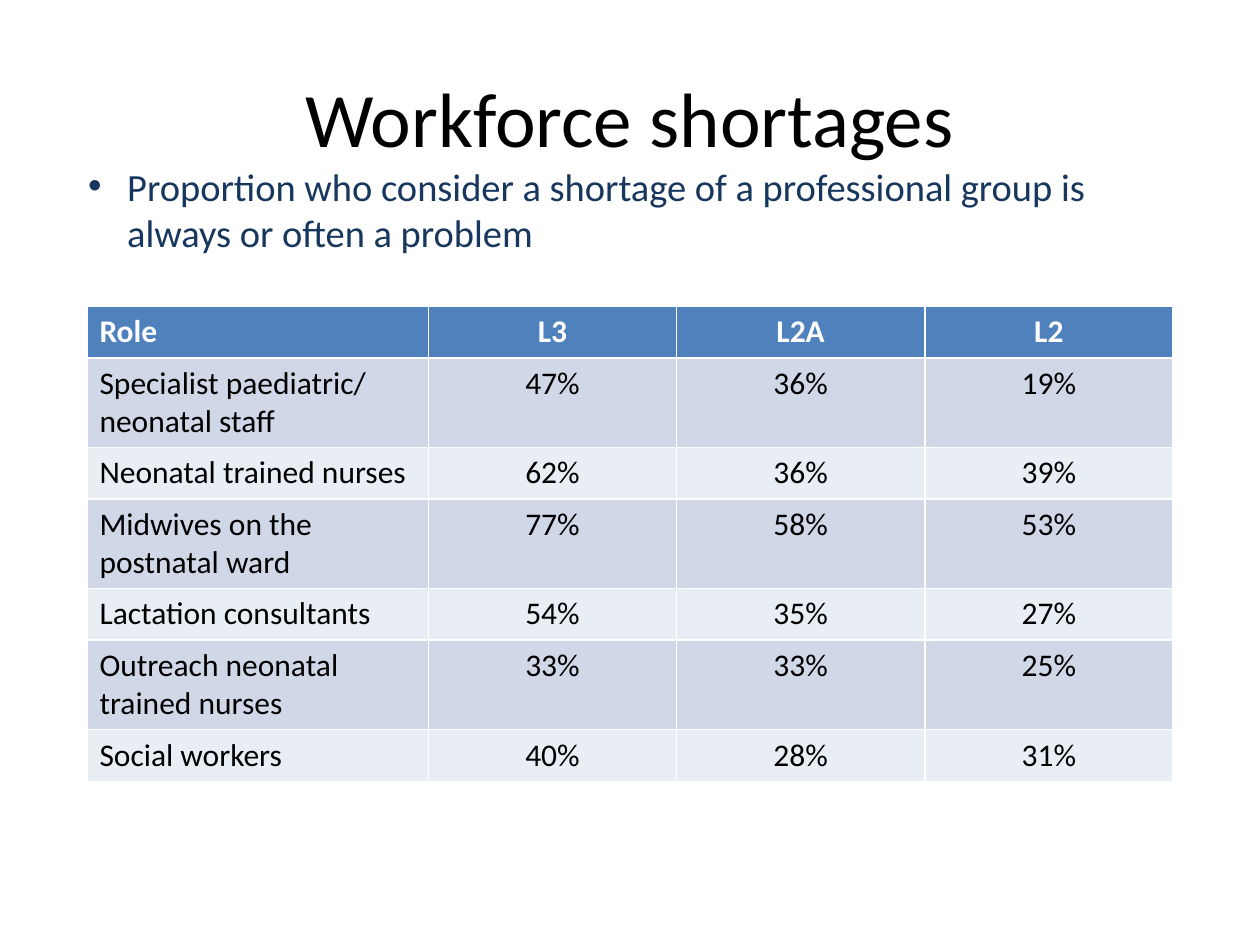
from dataclasses import dataclass

from lxml import etree
from pptx import Presentation
from pptx.dml.color import RGBColor
from pptx.enum.text import MSO_ANCHOR, MSO_AUTO_SIZE, PP_ALIGN
from pptx.oxml.ns import qn
from pptx.util import Inches, Pt

CENTER, LEFT = PP_ALIGN.CENTER, PP_ALIGN.LEFT
MIDDLE, TOP = MSO_ANCHOR.MIDDLE, MSO_ANCHOR.TOP
FIXED_SIZE = MSO_AUTO_SIZE.NONE


@dataclass(frozen=True)
class Theme:
    font: str = "Calibri"
    title_size: int = 44
    body_size: int = 22
    table_size: int = 18
    black: str = "000000"
    white: str = "FFFFFF"
    navy: str = "17375E"
    header_fill: str = "4F81BD"
    band_fills: tuple = ("D0D8E8", "E9EDF4")


THEME = Theme()
ROLES = [
    ("Role", "L3", "L2A", "L2"),
    ("Specialist paediatric/ neonatal staff", "47%", "36%", "19%"),
    ("Neonatal trained nurses", "62%", "36%", "39%"),
    ("Midwives on the postnatal ward", "77%", "58%", "53%"),
    ("Lactation consultants", "54%", "35%", "27%"),
    ("Outreach neonatal trained nurses", "33%", "33%", "25%"),
    ("Social workers", "40%", "28%", "31%"),
]
COLUMN_WIDTHS = (2.71, 1.97, 1.97, 1.97)
ROW_HEIGHT = 0.41


def place(shape, left, top, width, height):
    shape.left, shape.top = Inches(left), Inches(top)
    shape.width, shape.height = Inches(width), Inches(height)


def write(frame, text, size, color, align=LEFT, bold=False):
    frame.text = text
    paragraph = frame.paragraphs[0]
    paragraph.alignment = align
    font = paragraph.font
    font.name, font.size, font.bold = THEME.font, Pt(size), bold
    font.color.rgb = RGBColor.from_string(color)
    return paragraph


deck = Presentation()
deck.slide_width, deck.slide_height = Inches(10), Inches(7.5)
page = deck.slides.add_slide(deck.slide_layouts[1])

# Title
title = page.shapes.title
place(title, 0.5, 0.3, 9, 1.25)
title.text_frame.vertical_anchor = MIDDLE
write(title.text_frame, "Workforce shortages", THEME.title_size, THEME.black, CENTER)

# Bulleted statement
body = page.placeholders[1]
place(body, 0.6, 1.24, 9, 1.19)
body.text_frame.auto_size = FIXED_SIZE
body.text_frame.vertical_anchor = TOP
statement = write(
    body.text_frame,
    "Proportion who consider a shortage of a professional group is always or often a problem",
    THEME.body_size,
    THEME.navy,
)
statement.space_before = Pt(12)
properties = statement._p.get_or_add_pPr()
properties.set("marL", str(Inches(0.31)))
properties.set("indent", str(-Inches(0.31)))
bullet = etree.Element(qn("a:buChar"), char="•")
properties.find(qn("a:spcBef")).addnext(bullet)

# Table of shortages; the default table style draws the white cell borders
table = page.shapes.add_table(
    len(ROLES), len(COLUMN_WIDTHS), Inches(0.69), Inches(2.43),
    Inches(sum(COLUMN_WIDTHS)), Inches(ROW_HEIGHT * len(ROLES)),
).table
for column, width in zip(table.columns, COLUMN_WIDTHS):
    column.width = Inches(width)

for r, values in enumerate(ROLES):
    is_header = r == 0
    table.rows[r].height = Inches(ROW_HEIGHT)
    fill = THEME.header_fill if is_header else THEME.band_fills[(r - 1) % 2]
    color = THEME.white if is_header else THEME.black
    for c, value in enumerate(values):
        cell = table.cell(r, c)
        cell.fill.solid()
        cell.fill.fore_color.rgb = RGBColor.from_string(fill)
        align = LEFT if c == 0 else CENTER
        write(cell.text_frame, value, THEME.table_size, color, align, is_header)

deck.save("out.pptx")
